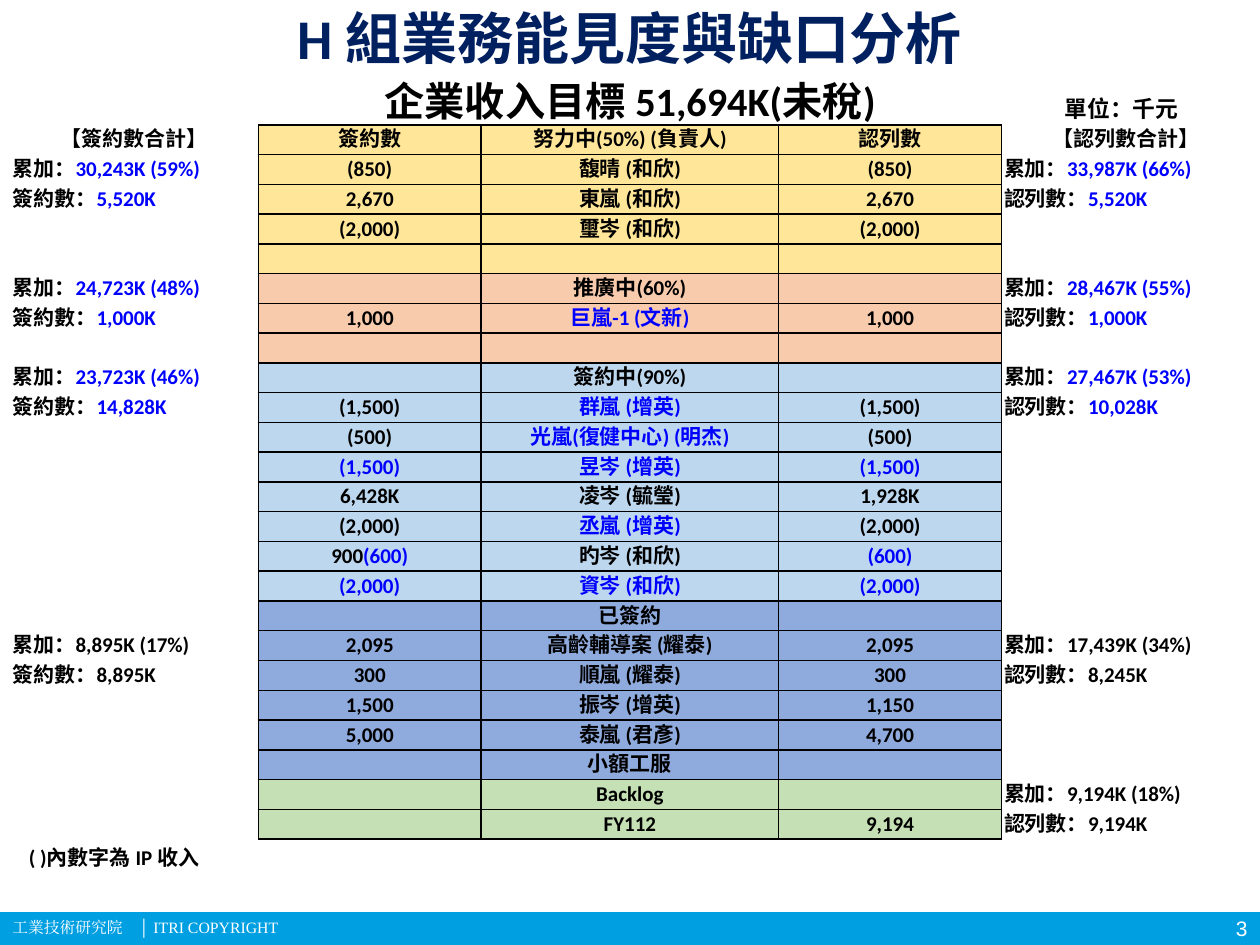
from lxml import etree
from pptx import Presentation
from pptx.dml.color import RGBColor
from pptx.enum.shapes import MSO_SHAPE
from pptx.enum.text import MSO_ANCHOR, PP_ALIGN
from pptx.oxml.ns import qn
from pptx.util import Inches, Pt

LEFT, MID, RIGHT = PP_ALIGN.LEFT, PP_ALIGN.CENTER, PP_ALIGN.RIGHT
CENTRE = MSO_ANCHOR.MIDDLE
RECT = MSO_SHAPE.RECTANGLE

BLACK = RGBColor(0x00, 0x00, 0x00)
WHITE = RGBColor(0xFF, 0xFF, 0xFF)
NAVY = RGBColor(0x00, 0x20, 0x60)
BLUE = RGBColor(0x00, 0x00, 0xFF)
CYAN = RGBColor(0x00, 0x9F, 0xE2)
YELLOW = RGBColor(0xFF, 0xE6, 0x99)
PEACH = RGBColor(0xF8, 0xCB, 0xAD)
SKY = RGBColor(0xBD, 0xD7, 0xEE)
STEEL = RGBColor(0x8F, 0xAA, 0xDC)
GREEN = RGBColor(0xC5, 0xE0, 0xB4)


def write(frame, text, size=12, font="Calibri", color=BLACK, bold=True, align=MID):
    """Fill the first paragraph; whatever follows a ~ is blue."""
    frame.word_wrap = True
    para = frame.paragraphs[0]
    para.alignment = align
    for part, tone in zip(text.split("~"), (color, BLUE)):
        if part:
            run = para.add_run()
            run.text = part
            run.font.size = Pt(size)
            run.font.name = font
            run.font.bold = bold
            run.font.color.rgb = tone
            east = etree.SubElement(run.font._element, qn("a:ea"))
            east.set("typeface", font)
    if not text:
        end = etree.SubElement(para._p, qn("a:endParaRPr"))
        end.set("sz", str(size * 100))
        etree.SubElement(end, qn("a:latin")).set("typeface", font)
        etree.SubElement(end, qn("a:ea")).set("typeface", font)


def edge(cell, sides):
    """Draw black lines on the named sides and none on the others."""
    props = cell._tc.get_or_add_tcPr()
    for side in "LRTB":
        line = etree.SubElement(props, qn("a:ln" + side))
        line.set("w", str(Pt(1)))
        if side in sides:
            fill = etree.SubElement(line, qn("a:solidFill"))
            etree.SubElement(fill, qn("a:srgbClr")).set("val", str(BLACK))
        else:
            etree.SubElement(line, qn("a:noFill"))


deck = Presentation()
deck.slide_width, deck.slide_height = Inches(10), Inches(7.5)
slide = deck.slides.add_slide(deck.slide_layouts[6])

# Footer bar
bar = slide.shapes.add_shape(RECT, Inches(0), Inches(7.24), Inches(10), Inches(0.26))
bar.shadow.inherit = False
bar.fill.solid()
bar.fill.fore_color.rgb = CYAN
bar.line.fill.background()

# Rows by stage: left total, signed, client, booked, right total
stages = [
    (YELLOW, [
        ("【簽約數合計】", "簽約數", "努力中(50%) (負責人)", "認列數", "【認列數合計】"),
        ("累加：~30,243K (59%)", "(850)", "馥晴 (和欣)", "(850)", "累加：~33,987K (66%)"),
        ("簽約數：~5,520K", "2,670", "東嵐 (和欣)", "2,670", "認列數：~5,520K"),
        ("", "(2,000)", "璽岑 (和欣)", "(2,000)", ""),
        ("", "", "", "", ""),
    ]),
    (PEACH, [
        ("累加：~24,723K (48%)", "", "推廣中(60%)", "", "累加：~28,467K (55%)"),
        ("簽約數：~1,000K", "1,000", "~巨嵐-1 (文新)", "1,000", "認列數：~1,000K"),
        ("", "", "", "", ""),
    ]),
    (SKY, [
        ("累加：~23,723K (46%)", "", "簽約中(90%)", "", "累加：~27,467K (53%)"),
        ("簽約數：~14,828K", "(1,500)", "~群嵐 (增英)", "(1,500)", "認列數：~10,028K"),
        ("", "(500)", "~光嵐(復健中心) (明杰)", "(500)", ""),
        ("", "~(1,500)", "~昱岑 (增英)", "~(1,500)", ""),
        ("", "6,428K", "凌岑 (毓瑩)", "1,928K", ""),
        ("", "(2,000)", "~丞嵐 (增英)", "(2,000)", ""),
        ("", "900~(600)", "旳岑 (和欣)", "~(600)", ""),
        ("", "~(2,000)", "~資岑 (和欣)", "~(2,000)", ""),
    ]),
    (STEEL, [
        ("", "", "已簽約", "", ""),
        ("累加：8,895K (17%)", "2,095", "高齡輔導案 (耀泰)", "2,095", "累加：17,439K (34%)"),
        ("簽約數：8,895K", "300", "順嵐 (耀泰)", "300", "認列數：8,245K"),
        ("", "1,500", "振岑 (增英)", "1,150", ""),
        ("", "5,000", "泰嵐 (君彥)", "4,700", ""),
        ("", "", "小額工服", "", ""),
    ]),
    (GREEN, [
        ("", "", "Backlog", "", "累加：9,194K (18%)"),
        ("", "", "FY112", "9,194", "認列數：9,194K"),
    ]),
]
rows = [(tone, row) for tone, group in stages for row in group]
widths = [1.97, 1.77, 2.36, 1.77, 1.97]
lines = ["R", "LRTB", "LRTB", "LRTB", "L"]

# Table
high = Inches(5.67)
table = slide.shapes.add_table(len(rows), len(widths), Inches(0.08), Inches(0.99),
                               Inches(sum(widths)), high).table
table.first_row = table.horz_banding = False
for col, width in zip(table.columns, widths):
    col.width = Inches(width)
for r, (tone, row) in enumerate(rows):
    table.rows[r].height = high // len(rows)
    for c, text in enumerate(row):
        cell = table.cell(r, c)
        side = c in (0, 4)
        cell.margin_left = cell.margin_right = Inches(0 if c == 2 else 0.02)
        cell.margin_top = cell.margin_bottom = 0
        cell.vertical_anchor = CENTRE
        edge(cell, lines[c])
        cell.fill.solid()
        cell.fill.fore_color.rgb = WHITE if side else tone
        write(cell.text_frame, text, align=LEFT if side and r else MID)

# Titles, unit, note and footer text, in front of the table
foot = {"font": "Times New Roman", "color": WHITE, "bold": False, "align": LEFT}
page = {"font": "Arial", "color": WHITE, "bold": False, "align": RIGHT}
boxes = [
    ((9.42, 7.24, 0.58, 0.26), "3", 12, page),
    ((0, 7.16, 8.94, 0.4), "工業技術研究院\t│ ITRI COPYRIGHT", 9, foot),
    ((0.47, 0, 9.06, 0.59), "H 組業務能見度與缺口分析", 32, {"color": NAVY}),
    ((0.47, 0.6, 9.06, 0.39), "企業收入目標 51,694K(未稅)", 23, {}),
    ((0.08, 6.6, 1.65, 0.4), "( )內數字為 IP 收入", 12, {}),
    ((8.31, 0.72, 1.18, 0.28), "單位：千元", 13, {"font": "Noto Sans CJK SC"}),
]
for place, text, size, style in boxes:
    box = slide.shapes.add_textbox(*[Inches(n) for n in place])
    frame = box.text_frame
    frame.vertical_anchor = CENTRE
    frame.margin_top = frame.margin_bottom = 0
    if "\t" in text:
        props = frame.paragraphs[0]._p.get_or_add_pPr()
        stops = etree.SubElement(props, qn("a:tabLst"))
        stop = etree.SubElement(stops, qn("a:tab"))
        stop.set("pos", str(Inches(1)))
        stop.set("algn", "l")
    write(frame, text, size=size, **style)

deck.save("out.pptx")
